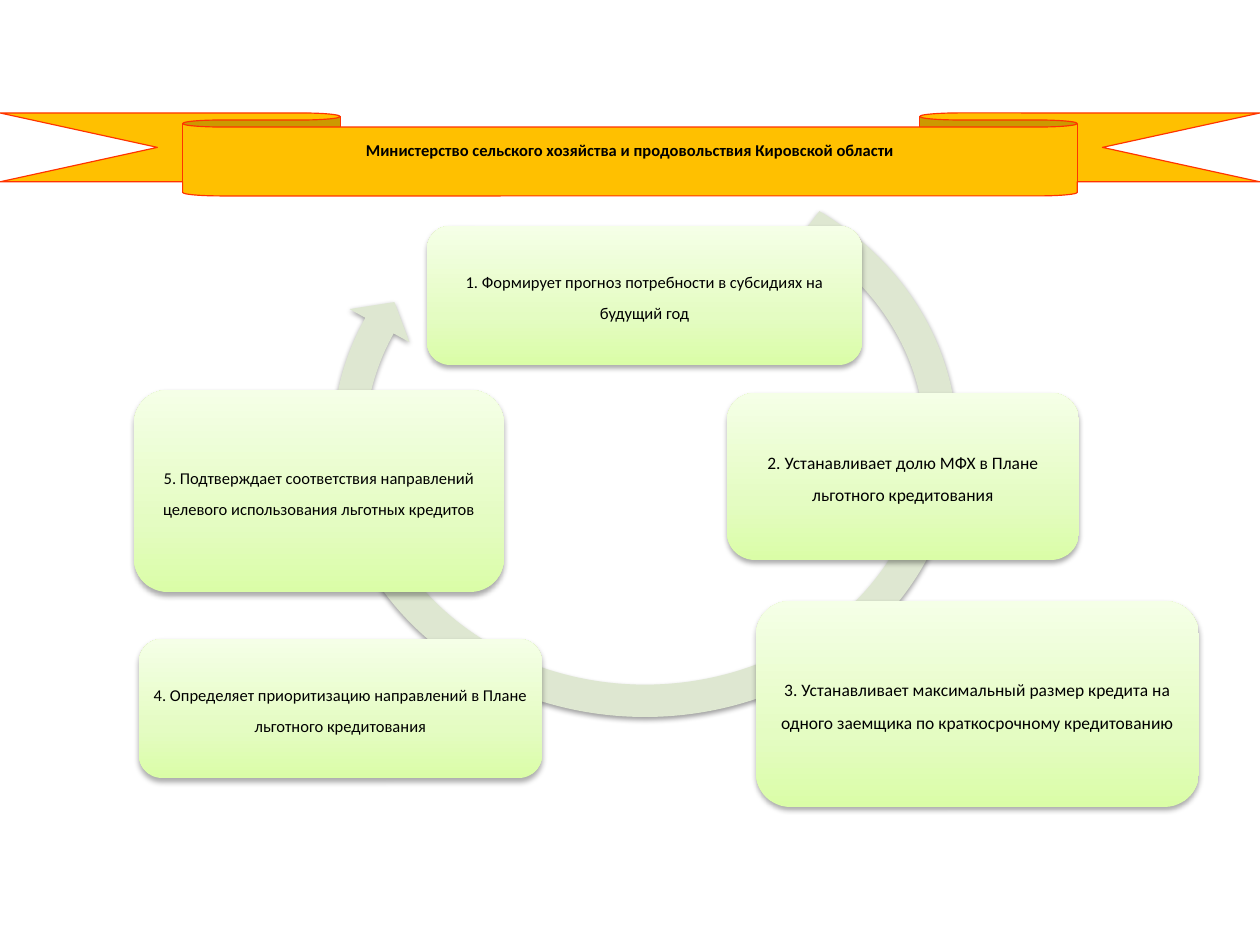
from copy import deepcopy

from lxml.etree import SubElement
from pptx import Presentation
from pptx.dml.color import RGBColor
from pptx.enum.shapes import MSO_SHAPE as Shape
from pptx.enum.text import MSO_ANCHOR as Anchor, PP_ALIGN as Align
from pptx.oxml.ns import qn
from pptx.util import Pt

PX = 8000
BLACK = RGBColor(0x00, 0x00, 0x00)
GOLD = RGBColor(0xFF, 0xC0, 0x00)
RED = RGBColor(0xFF, 0x33, 0x00)
SAGE = RGBColor(0xDE, 0xE7, 0xD1)
LIME_STOPS = [
    (0, RGBColor(0xDA, 0xFD, 0xA7)),
    (0.35, RGBColor(0xE4, 0xFC, 0xC2)),
    (1, RGBColor(0xF5, 0xFF, 0xE7)),
]
TITLE = "Министерство сельского хозяйства и продовольствия Кировской области"
STEPS = [
    ((427, 226, 435, 139), 18, "Формирует прогноз потребности в субсидиях на будущий год"),
    ((727, 393, 352, 167), 19, "Устанавливает долю МФХ в Плане льготного кредитования"),
    ((756, 601, 443, 206), 19,
     "Устанавливает максимальный размер кредита на одного заемщика по краткосрочному кредитованию"),
    ((139, 639, 403, 139), 18,
     "Определяет приоритизацию направлений в Плане льготного кредитования"),
    ((134, 390, 370, 202), 18,
     "Подтверждает соответствия направлений целевого использования льготных кредитов"),
]


def add_preset(page, kind, bounds, adjustments=()):
    """Add a preset shape without outline or shadow."""
    shape = page.shapes.add_shape(kind, *(value * PX for value in bounds))
    for index, value in enumerate(adjustments):
        shape.adjustments[index] = value
    shape.line.fill.background()
    shape.shadow.inherit = False
    return shape


def add_drop_shadow(shape, opacity, blur, distance):
    """Give a shape a black shadow that falls straight down."""
    effects = shape._element.spPr.find(qn("a:effectLst"))
    shadow = SubElement(effects, qn("a:outerShdw"), blurRad=str(Pt(blur)),
                        dist=str(Pt(distance)), dir="5400000", rotWithShape="0")
    color = SubElement(shadow, qn("a:srgbClr"), val=str(BLACK))
    SubElement(color, qn("a:alpha"), val=str(opacity * 1000))


def fill_lime(shape):
    """Fill a shape with the three-stop gradient, pale at the top."""
    shape.fill.gradient()
    shape.fill.gradient_angle = 90
    first = shape._element.spPr.find(".//" + qn("a:gs"))
    first.addnext(deepcopy(first))
    for stop, (position, color) in zip(shape.fill.gradient_stops, LIME_STOPS):
        stop.position = position
        stop.color.rgb = color


def write(shape, text, size, insets, bold=False):
    """Write one centred paragraph and return it."""
    frame = shape.text_frame
    frame.word_wrap = True
    frame.vertical_anchor = Anchor.MIDDLE
    (frame.margin_left, frame.margin_top,
     frame.margin_right, frame.margin_bottom) = (inset * PX for inset in insets)
    para = frame.paragraphs[0]
    para.text = text
    para.alignment = Align.CENTER
    para.font.name = "Calibri"
    para.font.size = Pt(size)
    para.font.bold = bold
    para.font.color.rgb = BLACK
    return para


def add_ribbon(page):
    """Add the title ribbon across the page."""
    ribbon = add_preset(page, Shape.DOWN_RIBBON, (0, 113, 1260, 83), (0.17, 0.71))
    ribbon.fill.solid()
    ribbon.fill.fore_color.rgb = GOLD
    ribbon.line.color.rgb = RED
    ribbon.line.width = Pt(0.75)
    write(ribbon, TITLE, 10.4, (10, 0, 10, 23), bold=True)


def add_cycle_arrow(page):
    """Add the circular arrow behind the steps."""
    arrow = add_preset(page, Shape.CIRCULAR_ARROW, (315, 146, 660, 589),
                       (0.055, 3.307, 122.035, 184.353, 0.058))
    arrow.fill.solid()
    arrow.fill.fore_color.rgb = SAGE
    add_drop_shadow(arrow, 38, 3.1, 1.6)


def add_step(page, bounds, size, text):
    """Add a rounded step box with slightly raised text."""
    step = add_preset(page, Shape.ROUNDED_RECTANGLE, bounds)
    fill_lime(step)
    add_drop_shadow(step, 32, 3.5, 2.2)
    para = write(step, text, size, (6, 8, 6, 8))
    para.line_spacing = 0.9
    for span in para.runs:
        span._r.get_or_add_rPr().set("baseline", "2000")


def main():
    """Build and save the slide."""
    deck = Presentation()
    deck.slide_width, deck.slide_height = 1260 * PX, 945 * PX
    page = deck.slides.add_slide(deck.slide_layouts[6])
    add_ribbon(page)
    add_cycle_arrow(page)
    for number, (bounds, size, text) in enumerate(STEPS, start=1):
        add_step(page, bounds, size, f"{number}. {text}")
    deck.save("out.pptx")


if __name__ == "__main__":
    main()
